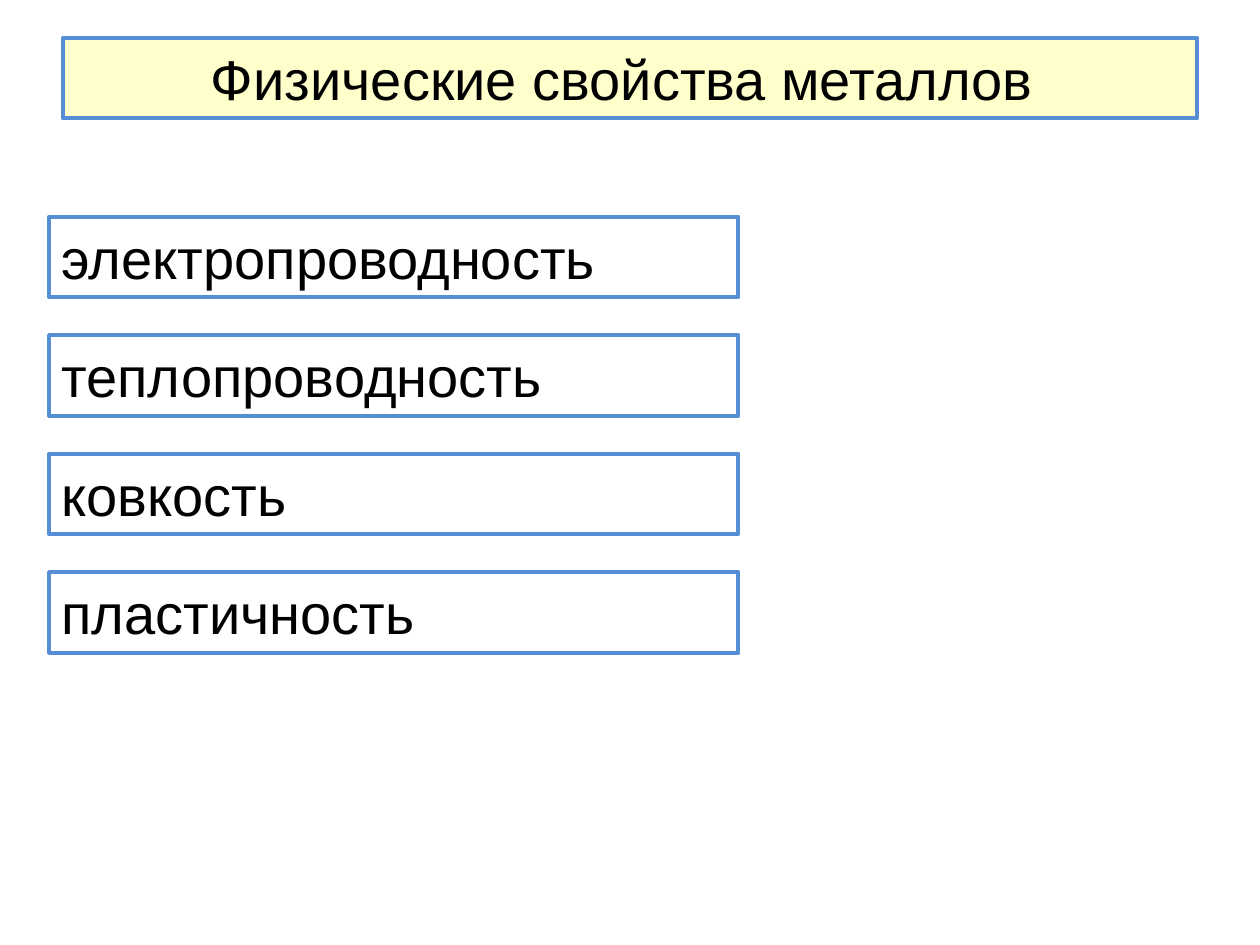
import pptx
import pptx.util
import pptx.dml.color
import pptx.enum.shapes
import pptx.enum.text
from pptx.util import Inches, Pt

BLACK = pptx.dml.color.RGBColor(0x00, 0x00, 0x00)
BLUE = pptx.dml.color.RGBColor(0x55, 0x8E, 0xD5)
CREAM = pptx.dml.color.RGBColor(0xFF, 0xFF, 0xCC)

HEIGHT = 0.64
TRAITS = ["электропроводность", "теплопроводность", "ковкость", "пластичность"]


def style(shape, text, align):
    """Give a box its blue frame and its text."""
    shape.line.color.rgb = BLUE
    shape.line.width = Pt(2.25)
    frame = shape.text_frame
    frame.word_wrap = True
    frame.auto_size = pptx.enum.text.MSO_AUTO_SIZE.NONE
    frame.vertical_anchor = pptx.enum.text.MSO_ANCHOR.MIDDLE
    frame.text = text
    par = frame.paragraphs[0]
    par.alignment = align
    par.font.name = "Arial"
    par.font.size = Pt(32)
    par.font.color.rgb = BLACK


def add_title(slide, text):
    title = slide.shapes.title
    title.left, title.top = Inches(0.5), Inches(0.3)
    title.width, title.height = Inches(9), Inches(HEIGHT)
    title.fill.solid()
    title.fill.fore_color.rgb = CREAM
    style(title, text, pptx.enum.text.PP_ALIGN.CENTER)


def add_trait(slide, text, top):
    box = slide.shapes.add_shape(
        pptx.enum.shapes.MSO_SHAPE.RECTANGLE,
        Inches(0.39), Inches(top), Inches(5.47), Inches(HEIGHT))
    box.shadow.inherit = False
    box.fill.background()
    style(box, text, pptx.enum.text.PP_ALIGN.LEFT)


def main():
    deck = pptx.Presentation()
    deck.slide_width, deck.slide_height = Inches(10), Inches(7.5)
    slide = deck.slides.add_slide(deck.slide_layouts[5])
    add_title(slide, "Физические свойства металлов ")
    for row, trait in enumerate(TRAITS):
        add_trait(slide, trait, 1.72 + 0.94 * row)
    deck.save("out.pptx")


if __name__ == "__main__":
    main()
